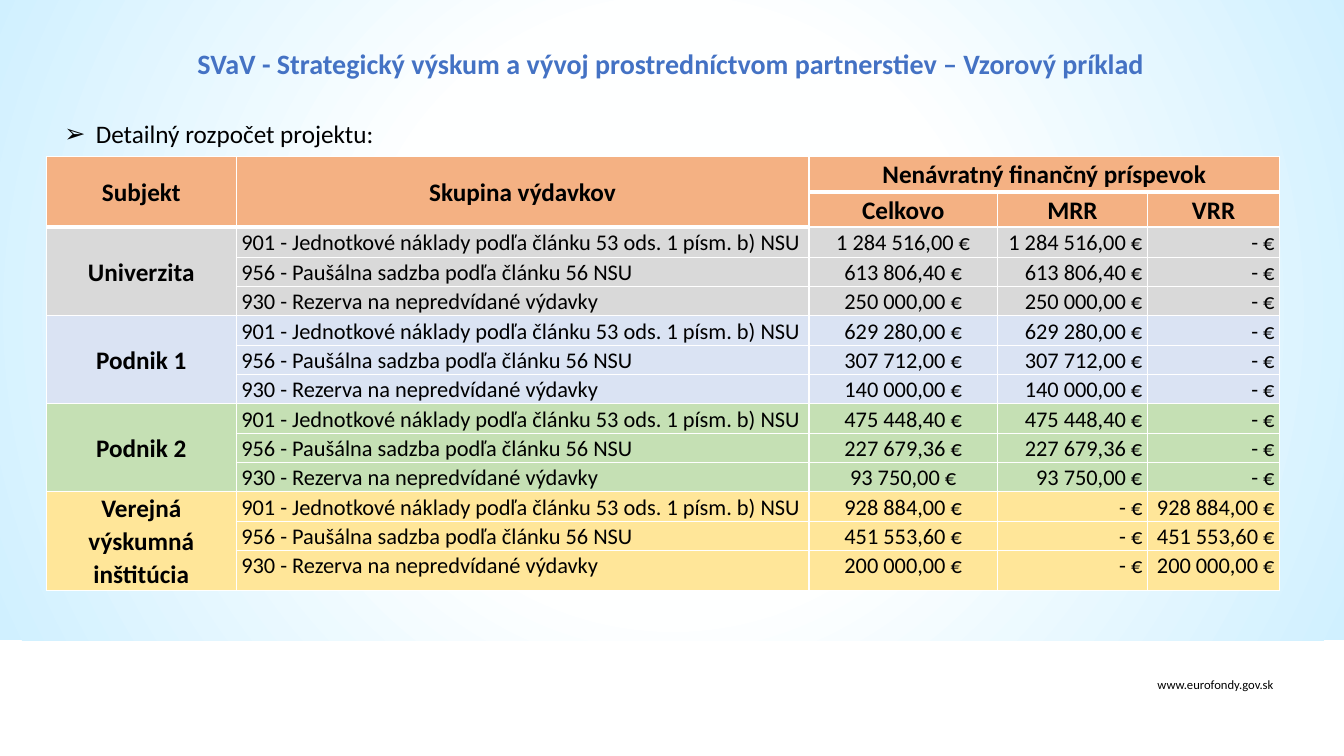
from pptx import Presentation
from pptx.dml.color import RGBColor as RGB
from pptx.enum.shapes import MSO_SHAPE as SHAPE
from pptx.enum.text import MSO_ANCHOR as ANCHOR, MSO_AUTO_SIZE as AUTO, PP_ALIGN as AL
from pptx.oxml import parse_xml
from pptx.oxml.ns import nsdecls
from pptx.util import Cm, Pt

COLORS = {
    "text": "000000", "title": "4472C4", "border": "FFFFFF",
    "glow": "FEFFFF", "sky": "D0F0FF", "header": "F4B183",
    "Univerzita": "D9D9D9", "Podnik 1": "DAE3F3", "Podnik 2": "C5E0B4",
    "Verejná výskumná inštitúcia": "FFE699",
}
HEADINGS = [
    (0, 0, 1, 0, "Subjekt"), (0, 1, 1, 1, "Skupina výdavkov"),
    (0, 2, 0, 4, "Nenávratný finančný príspevok"),
    (1, 2, 1, 2, "Celkovo"), (1, 3, 1, 3, "MRR"), (1, 4, 1, 4, "VRR"),
]
EXPENSES = [
    "901 - Jednotkové náklady podľa článku 53 ods. 1 písm. b) NSU",
    "956 - Paušálna sadzba podľa článku 56 NSU",
    "930 - Rezerva na nepredvídané výdavky",
]
BUDGETS = [
    ("Univerzita", "MRR", ["1 284 516,00 €", "613 806,40 €", "250 000,00 €"]),
    ("Podnik 1", "MRR", ["629 280,00 €", "307 712,00 €", "140 000,00 €"]),
    ("Podnik 2", "MRR", ["475 448,40 €", "227 679,36 €", "93 750,00 €"]),
    ("Verejná výskumná inštitúcia", "VRR",
     ["928 884,00 €", "451 553,60 €", "200 000,00 €"]),
]
NONE = "- €"
COL_WIDTHS = [4.78, 14.43, 4.75, 3.78, 3.33]
ROW_HEIGHTS = [0.89, 0.89, 0.76] + [0.72] * 11
BOLD = {"size": Pt(18), "bold": True}
PLAIN = {"size": Pt(16), "bold": False}


def write(tf, text, font, color="text", **para):
    p = tf.paragraphs[0]
    for name, value in para.items():
        setattr(p, name, value)
    r = p.add_run()
    r.text = text
    for name, value in {"name": "Calibri", **font}.items():
        setattr(r.font, name, value)
    r.font.color.rgb = RGB.from_string(COLORS[color])


def place(sp, left, top, width, height):
    box = {"left": left, "top": top, "width": width, "height": height}
    for name, value in box.items():
        setattr(sp, name, Cm(value))
    tf = sp.text_frame
    frame = {"word_wrap": True, "auto_size": AUTO.NONE, "vertical_anchor": ANCHOR.MIDDLE}
    for name, value in frame.items():
        setattr(tf, name, value)
    return tf


def add_backdrop(s):
    sp = s.shapes.add_shape(SHAPE.RECTANGLE, Cm(0), Cm(-0.33), Cm(33.91), Cm(16.46))
    sp.shadow.inherit = False
    sp.line.fill.background()
    stops = "".join(
        f'<a:gs pos="{pos}"><a:srgbClr val="{COLORS[color]}"/></a:gs>'
        for pos, color in [(0, "glow"), (40000, "glow"), (100000, "sky")])
    sp.element.spPr.insert(2, parse_xml(
        f'<a:gradFill {nsdecls("a")} rotWithShape="1"><a:gsLst>{stops}</a:gsLst>'
        '<a:path path="circle"><a:fillToRect l="50000" t="50000" r="50000" b="50000"/>'
        '</a:path></a:gradFill>'))
    sp.element.getparent().insert(2, sp.element)


def add_bullet(p):
    pPr = p._p.get_or_add_pPr()
    pPr.set("marL", str(Cm(0.79)))
    pPr.set("indent", str(Cm(-0.79)))
    pPr.append(parse_xml(f'<a:buChar {nsdecls("a")} char="➢"/>'))


def set_borders(cell, row, col):
    top = 3 if row == (1 if col > 1 else 2) else 1
    bottom = 3 if row == 0 else 1
    tcPr = cell._tc.get_or_add_tcPr()
    for i, (side, width) in enumerate([("L", 1), ("R", 1), ("T", top), ("B", bottom)]):
        tcPr.insert(i, parse_xml(
            f'<a:ln{side} {nsdecls("a")} w="{Pt(width)}"><a:solidFill>'
            f'<a:srgbClr val="{COLORS["border"]}"/></a:solidFill></a:ln{side}>'))


def write_cell(cell, text, font, align, anchor=ANCHOR.TOP):
    cell.vertical_anchor = anchor
    write(cell.text_frame, text, font, alignment=align, line_spacing=1.07)


def add_budget_table(s):
    table = s.shapes.add_table(
        len(ROW_HEIGHTS), len(COL_WIDTHS), Cm(1.17), Cm(3.94),
        Cm(sum(COL_WIDTHS)), Cm(sum(ROW_HEIGHTS))).table
    table.first_row = table.horz_banding = False
    for col, width in zip(table.columns, COL_WIDTHS):
        col.width = Cm(width)
    margins = {"margin_left": 0.13, "margin_right": 0.13,
               "margin_top": 0, "margin_bottom": 0}
    for i, row in enumerate(table.rows):
        row.height = Cm(ROW_HEIGHTS[i])
        color = "header" if i < 2 else BUDGETS[(i - 2) // 3][0]
        for j, cell in enumerate(row.cells):
            for name, value in margins.items():
                setattr(cell, name, Cm(value))
            cell.fill.solid()
            cell.fill.fore_color.rgb = RGB.from_string(COLORS[color])
            set_borders(cell, i, j)

    subjects = [(2 + 3 * n, 0, 4 + 3 * n, 0, b[0]) for n, b in enumerate(BUDGETS)]
    for top, left, bottom, right, text in HEADINGS + subjects:
        cell = table.cell(top, left)
        if (top, left) != (bottom, right):
            cell.merge(table.cell(bottom, right))
        write_cell(cell, text, BOLD, AL.CENTER, ANCHOR.MIDDLE)

    for n, (_, region, amounts) in enumerate(BUDGETS):
        for k, (expense, amount) in enumerate(zip(EXPENSES, amounts)):
            shares = [amount if region == name else NONE for name in ("MRR", "VRR")]
            texts = [expense, amount] + shares
            aligns = [AL.LEFT, AL.CENTER, AL.RIGHT, AL.RIGHT]
            for j, (text, align) in enumerate(zip(texts, aligns), 1):
                write_cell(table.cell(2 + 3 * n + k, j), text, PLAIN, align)


def main():
    prs = Presentation()
    prs.slide_width, prs.slide_height = Cm(33.86), Cm(19.05)
    s = prs.slides.add_slide(prs.slide_layouts[1])
    add_backdrop(s)

    tf = place(s.shapes.title, 1.37, 1, 31.06, 1.18)
    write(tf, "SVaV - Strategický výskum a vývoj prostredníctvom partnerstiev – Vzorový príklad",
          {"size": Pt(20), "bold": True}, "title", alignment=AL.CENTER)

    tf = place(s.placeholders[1], 1.37, 2.81, 31.06, 1.1)
    add_bullet(tf.paragraphs[0])
    write(tf, "Detailný rozpočet projektu:", {"size": Pt(18), "bold": False},
          alignment=AL.JUSTIFY, space_before=Pt(0))

    add_budget_table(s)

    sp = s.shapes.add_textbox(Cm(0), Cm(0), Cm(1), Cm(1))
    tf = place(sp, 27.25, 16.92, 5.08, 0.64)
    write(tf, "www.eurofondy.gov.sk", {"size": Pt(9)}, alignment=AL.RIGHT)
    prs.save("out.pptx")


if __name__ == "__main__":
    main()
